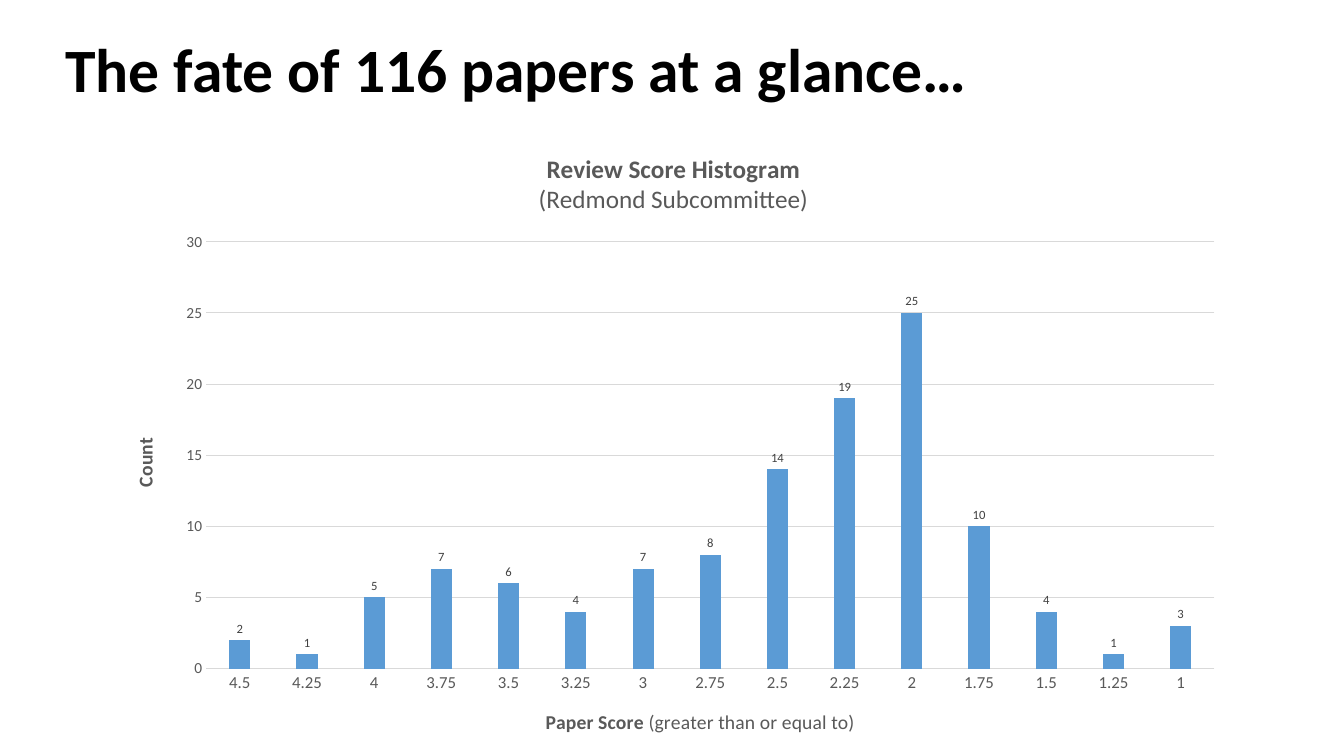
"""Build a slide with a histogram of paper review scores."""
import pptx
import pptx.chart.data
import pptx.dml.color
import pptx.enum.chart
import pptx.enum.text
import pptx.util

Cm = pptx.util.Cm
Pt = pptx.util.Pt
COLORS = {"title": "000000", "text": "595959", "label": "404040",
          "grid": "D9D9D9", "bar": "5B9BD5"}
FONT = "Calibri"
COUNTS = [2, 1, 5, 7, 6, 4, 7, 8, 14, 19, 25, 10, 4, 1, 3]


def style_font(font, size, color, bold=False):
    font.name = FONT
    font.size = Pt(size)
    font.bold = bold
    font.color.rgb = pptx.dml.color.RGBColor.from_string(COLORS[color])


def style_line(line, color):
    line.width = Pt(0.75)
    line.color.rgb = pptx.dml.color.RGBColor.from_string(COLORS[color])


prs = pptx.Presentation()
prs.slide_width = Cm(33.87)
prs.slide_height = Cm(19.05)
s = prs.slides.add_slide(prs.slide_layouts[6])

data = pptx.chart.data.CategoryChartData()
data.categories = [f"{4.5 - i * 0.25:g}" for i in range(len(COUNTS))]
data.add_series("Series 1", COUNTS)
chart = s.shapes.add_chart(
    pptx.enum.chart.XL_CHART_TYPE.COLUMN_CLUSTERED,
    Cm(2.77), Cm(3.3), Cm(28.4), Cm(15.75), data).chart
chart.has_legend = False
style_font(chart.font, 10, "title")

plot = chart.plots[0]
plot.gap_width = 219
plot.overlap = -27
plot.vary_by_categories = False
bars = plot.series[0]
bars.invert_if_negative = False
bars.format.fill.solid()
bars.format.fill.fore_color.rgb = pptx.dml.color.RGBColor.from_string(COLORS["bar"])
labels = bars.data_labels
labels.show_value = True
labels.position = pptx.enum.chart.XL_LABEL_POSITION.OUTSIDE_END
style_font(labels.font, 9, "label")

cat_axis = chart.category_axis
val_axis = chart.value_axis
for axis, size in [(cat_axis, 12), (val_axis, 11)]:
    axis.major_tick_mark = pptx.enum.chart.XL_TICK_MARK.NONE
    axis.minor_tick_mark = pptx.enum.chart.XL_TICK_MARK.NONE
    style_font(axis.tick_labels.font, size, "text")
style_line(cat_axis.format.line, "grid")
val_axis.format.line.fill.background()
val_axis.minimum_scale = 0
val_axis.maximum_scale = 30
val_axis.major_unit = 5
style_line(val_axis.major_gridlines.format.line, "grid")

titles = [
    (chart, 18, [[("Review Score Histogram", True)],
                 [("(Redmond Subcommittee)", False)]]),
    (cat_axis, 14, [[("Paper Score ", True), ("(greater than or equal to)", False)]]),
    (val_axis, 14, [[("Count", True)]]),
]
for owner, size, paragraphs in titles:
    title = owner.chart_title if owner is chart else owner.axis_title
    tf = title.text_frame
    for i, runs in enumerate(paragraphs):
        p = tf.add_paragraph() if i else tf.paragraphs[0]
        for text, bold in runs:
            r = p.add_run()
            r.text = text
            style_font(r.font, size, "text", bold)
chart.chart_title.include_in_layout = False

sp = s.shapes.add_textbox(Cm(1.4), Cm(0), Cm(31.06), Cm(3.68))
tf = sp.text_frame
tf.word_wrap = True
tf.vertical_anchor = pptx.enum.text.MSO_ANCHOR.MIDDLE
p = tf.paragraphs[0]
p.line_spacing = 0.9
r = p.add_run()
r.text = "The fate of 116 papers at a glance…"
style_font(r.font, 44, "title", True)

prs.save("out.pptx")
